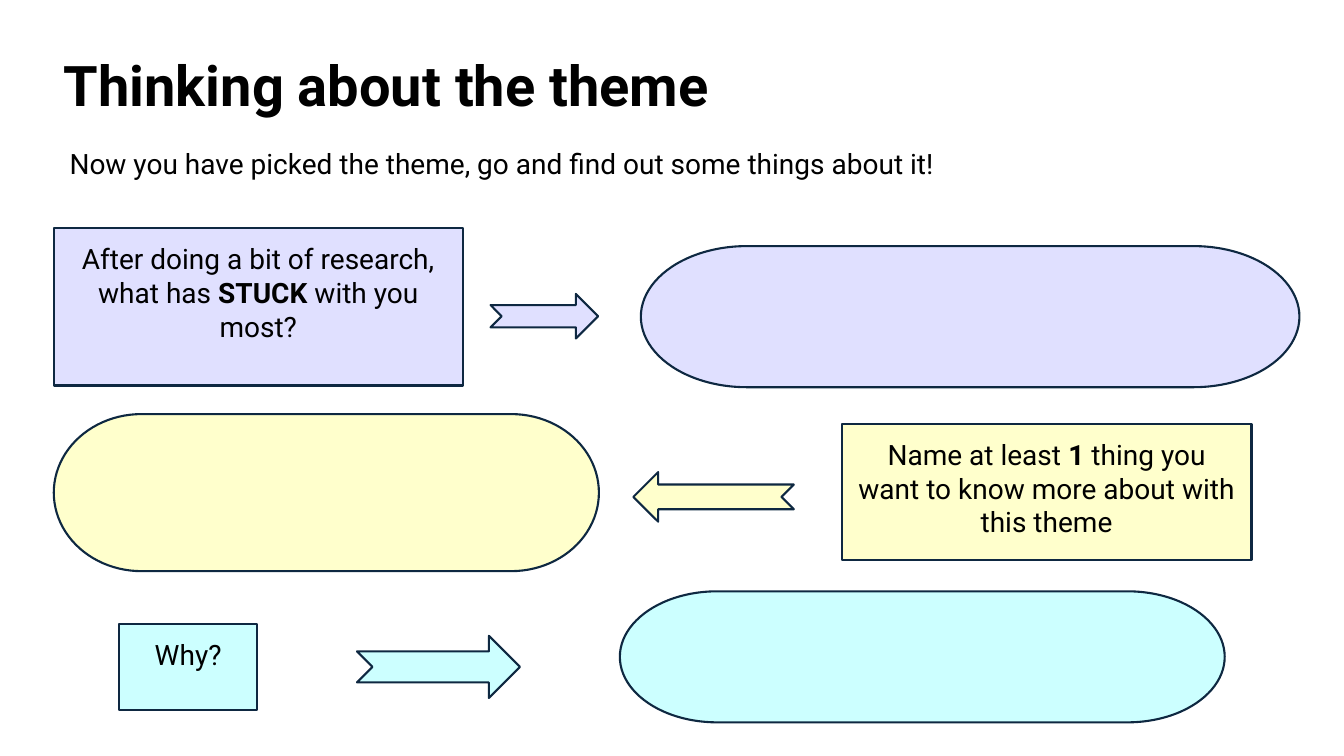
from dataclasses import dataclass

from lxml import etree
from pptx import Presentation
from pptx.dml.color import RGBColor
from pptx.enum.shapes import MSO_SHAPE
from pptx.enum.text import MSO_ANCHOR, PP_ALIGN
from pptx.oxml.ns import qn
from pptx.util import Inches, Pt

RECT = MSO_SHAPE.RECTANGLE
ARROW = MSO_SHAPE.NOTCHED_RIGHT_ARROW
PILL = MSO_SHAPE.FLOWCHART_TERMINATOR
TOP, MIDDLE = MSO_ANCHOR.TOP, MSO_ANCHOR.MIDDLE
LEFT, CENTER = PP_ALIGN.LEFT, PP_ALIGN.CENTER

# Grid of 160 columns by 90 rows with square cells
WIDE, HIGH = Inches(13.333), Inches(7.5)
COLS, ROWS = 160, 90
INK, EDGE = "000000", "0E2841"

Area = tuple[float, float, float, float]


@dataclass
class Step:
    prompt: str  # words between asterisks are bold
    fill: str
    alpha: int
    turn: int
    box: Area
    arrow: Area
    pill: Area


STEPS = [
    Step("After doing a bit of research, what has *STUCK* with you most?",
         "CCCCFF", 60, 0, (6.4, 27.2, 48.7, 18.7),
         (58.4, 35, 12.8, 5.3), (76.3, 29.3, 78.4, 16.8)),
    Step("Name at least *1* thing you want to know more about with this theme",
         "FFFFCC", 100, 180, (100.2, 50.5, 48.8, 16.2),
         (75.4, 56.2, 19.1, 5.9), (6.4, 49.3, 64.9, 18.7)),
    Step("Why?", "CCFFFF", 100, 0, (14.2, 74.3, 16.4, 10.2),
         (42.5, 75.7, 19.4, 7.4), (73.8, 70.4, 72, 15.6)),
]


def col(n: float) -> int:
    return round(WIDE * n / COLS)


def row(n: float) -> int:
    return round(HIGH * n / ROWS)


def place(area: Area) -> tuple[int, int, int, int]:
    x, y, w, h = area
    return col(x), row(y), col(w), row(h)


def paint(target, shade: str) -> None:
    target.rgb = RGBColor.from_string(shade)


def assign(target, values: dict) -> None:
    for name, value in values.items():
        setattr(target, name, value)


def write(shape, text: str, size: int, align, frame: dict,
          bold: bool = False) -> None:
    """Fill a shape with one paragraph, bold between asterisks."""
    assign(shape.text_frame, frame)
    para = shape.text_frame.paragraphs[0]
    para.alignment = align
    for i, part in enumerate(text.split("*")):
        run = para.add_run()
        run.text = part
        assign(run.font, {"name": "Roboto", "size": Pt(size),
                          "bold": bold or i % 2 == 1})
        paint(run.font.color, INK)


def draw(slide, kind, area: Area, step: Step):
    """Add one outlined shape in the colour of its step."""
    shape = slide.shapes.add_shape(kind, *place(area))
    shape.shadow.inherit = False
    shape.fill.solid()
    paint(shape.fill.fore_color, step.fill)
    if step.alpha < 100:
        tint = shape.fill._xPr.find(qn("a:solidFill"))[0]
        etree.SubElement(tint, qn("a:alpha"), val=str(step.alpha * 1000))
    paint(shape.line.color, EDGE)
    shape.line.width = Pt(1.5)
    return shape


def main() -> None:
    deck = Presentation()
    assign(deck, {"slide_width": WIDE, "slide_height": HIGH})
    slide = deck.slides.add_slide(deck.slide_layouts[5])

    # Title and lead line
    title = slide.shapes.title
    spot = place((6.4, 6.4, 138, 8.2))
    assign(title, dict(zip(("left", "top", "width", "height"), spot)))
    write(title, "Thinking about the theme", 40, LEFT,
          {"vertical_anchor": MIDDLE, "word_wrap": True}, bold=True)
    title.text_frame.paragraphs[0].line_spacing = 0.9
    lead = slide.shapes.add_textbox(*place((7.1, 16.8, 107.9, 5.3)))
    write(lead, "Now you have picked the theme, go and find out some things "
          "about it!", 20, LEFT, {"word_wrap": False})

    # Prompt, arrow and answer space of each step
    pad = col(1.6)
    frame = {"vertical_anchor": TOP, "word_wrap": True,
             "margin_left": pad, "margin_right": pad,
             "margin_top": pad, "margin_bottom": pad}
    for step in STEPS:
        draw(slide, ARROW, step.arrow, step).rotation = step.turn
        draw(slide, PILL, step.pill, step)
        box = draw(slide, RECT, step.box, step)
        write(box, step.prompt, 20, CENTER, frame)

    deck.save("out.pptx")


if __name__ == "__main__":
    main()
